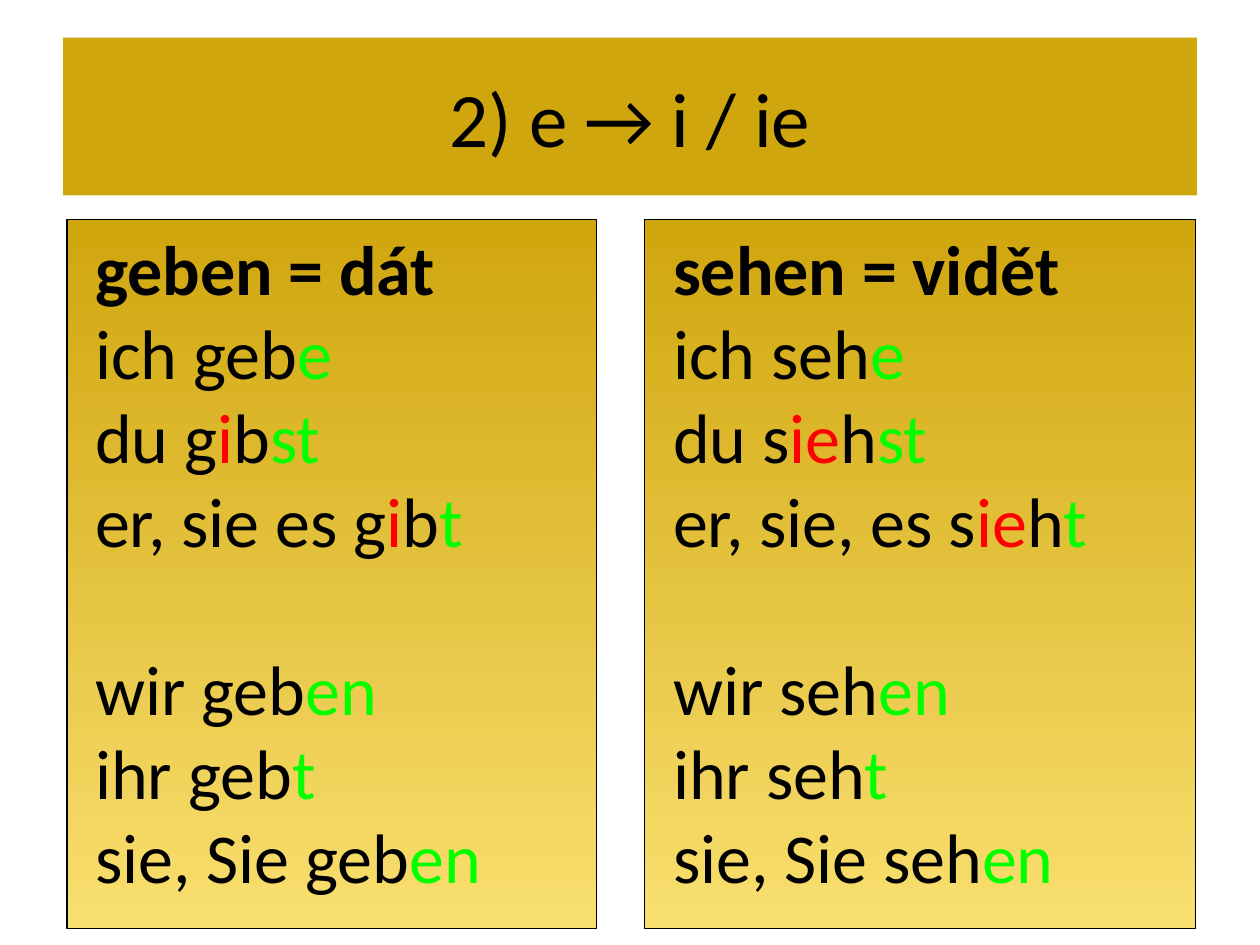
import collections

import pptx
import pptx.dml.color
import pptx.enum.shapes
import pptx.enum.text
import pptx.util

Cm = pptx.util.Cm
Pt = pptx.util.Pt
RGBColor = pptx.dml.color.RGBColor

GOLD = RGBColor(0xD0, 0xA6, 0x0E)
PALE_GOLD = RGBColor(0xF9, 0xDF, 0x6F)
BLACK = RGBColor(0, 0, 0)
VOWEL_RED = RGBColor(0xFF, 0, 0)
ENDING_GREEN = RGBColor(0, 0xFF, 0)
FONT = "Calibri"
VERB_SIZE = 40

Box = collections.namedtuple("Box", "left top width height")

TITLE_BOX = Box(1.27, 0.76, 22.86, 3.18)
GEBEN_BOX = Box(1.35, 4.42, 10.67, 14.3)
SEHEN_BOX = Box(13, 4.42, 11.1, 14.3)

# Each form: pronoun with stem start, changed vowel, stem end, ending
GEBEN_SINGULAR = [
    ("ich geb", "", "", "e"),
    ("du g", "i", "b", "st"),
    ("er, sie es g", "i", "b", "t"),
]
GEBEN_PLURAL = [
    ("wir geb", "", "", "en"),
    ("ihr geb", "", "", "t"),
    ("sie, Sie geb", "", "", "en"),
]
SEHEN_SINGULAR = [
    ("ich seh", "", "", "e"),
    ("du s", "ie", "h", "st"),
    ("er, sie, es s", "ie", "h", "t"),
]
SEHEN_PLURAL = [
    ("wir seh", "", "", "en"),
    ("ihr seh", "", "", "t"),
    ("sie, Sie seh", "", "", "en"),
]


def add_span(para, text, size=VERB_SIZE, color=BLACK, bold=False):
    span = para.add_run()
    span.text = text
    span.font.name = FONT
    span.font.size = Pt(size)
    span.font.bold = bold
    span.font.color.rgb = color


def add_title(page, box, text):
    title = page.shapes.title
    title.left, title.top, title.width, title.height = map(Cm, box)
    title.fill.solid()
    title.fill.fore_color.rgb = GOLD
    frame = title.text_frame
    frame.auto_size = pptx.enum.text.MSO_AUTO_SIZE.NONE
    frame.vertical_anchor = pptx.enum.text.MSO_ANCHOR.MIDDLE
    para = frame.paragraphs[0]
    para.alignment = pptx.enum.text.PP_ALIGN.CENTER
    add_span(para, text, size=44)


def add_verb_panel(page, box, heading, singular, plural):
    """Place a gradient panel with a verb's conjugation, vowels and endings coloured."""
    panel = page.shapes.add_shape(
        pptx.enum.shapes.MSO_SHAPE.RECTANGLE, *map(Cm, box))
    panel.shadow.inherit = False
    panel.fill.gradient()
    panel.fill.gradient_angle = 270
    for stop, color, position in zip(
            panel.fill.gradient_stops, (GOLD, PALE_GOLD), (0, 1)):
        stop.color.rgb = color
        stop.position = position
    panel.line.color.rgb = BLACK
    panel.line.width = Pt(0.75)

    frame = panel.text_frame
    frame.word_wrap = True
    frame.vertical_anchor = pptx.enum.text.MSO_ANCHOR.TOP
    frame.margin_left = Cm(0.57)
    para = frame.paragraphs[0]
    para.alignment = pptx.enum.text.PP_ALIGN.LEFT
    add_span(para, heading, bold=True)
    colors = (BLACK, VOWEL_RED, BLACK, ENDING_GREEN)
    for index, form in enumerate(singular + plural):
        para = frame.add_paragraph()
        para.alignment = pptx.enum.text.PP_ALIGN.LEFT
        if index == len(singular):
            para.space_before = Pt(48)
        for text, color in zip(form, colors):
            if text:
                add_span(para, text, color=color)


def main():
    deck = pptx.Presentation()
    deck.slide_width, deck.slide_height = Cm(25.4), Cm(19.05)
    page = deck.slides.add_slide(deck.slide_layouts.get_by_name("Title Only"))
    add_title(page, TITLE_BOX, "2) e → i / ie")
    add_verb_panel(page, GEBEN_BOX, "geben = dát", GEBEN_SINGULAR, GEBEN_PLURAL)
    add_verb_panel(page, SEHEN_BOX, "sehen = vidět", SEHEN_SINGULAR, SEHEN_PLURAL)
    deck.save("out.pptx")


if __name__ == "__main__":
    main()
